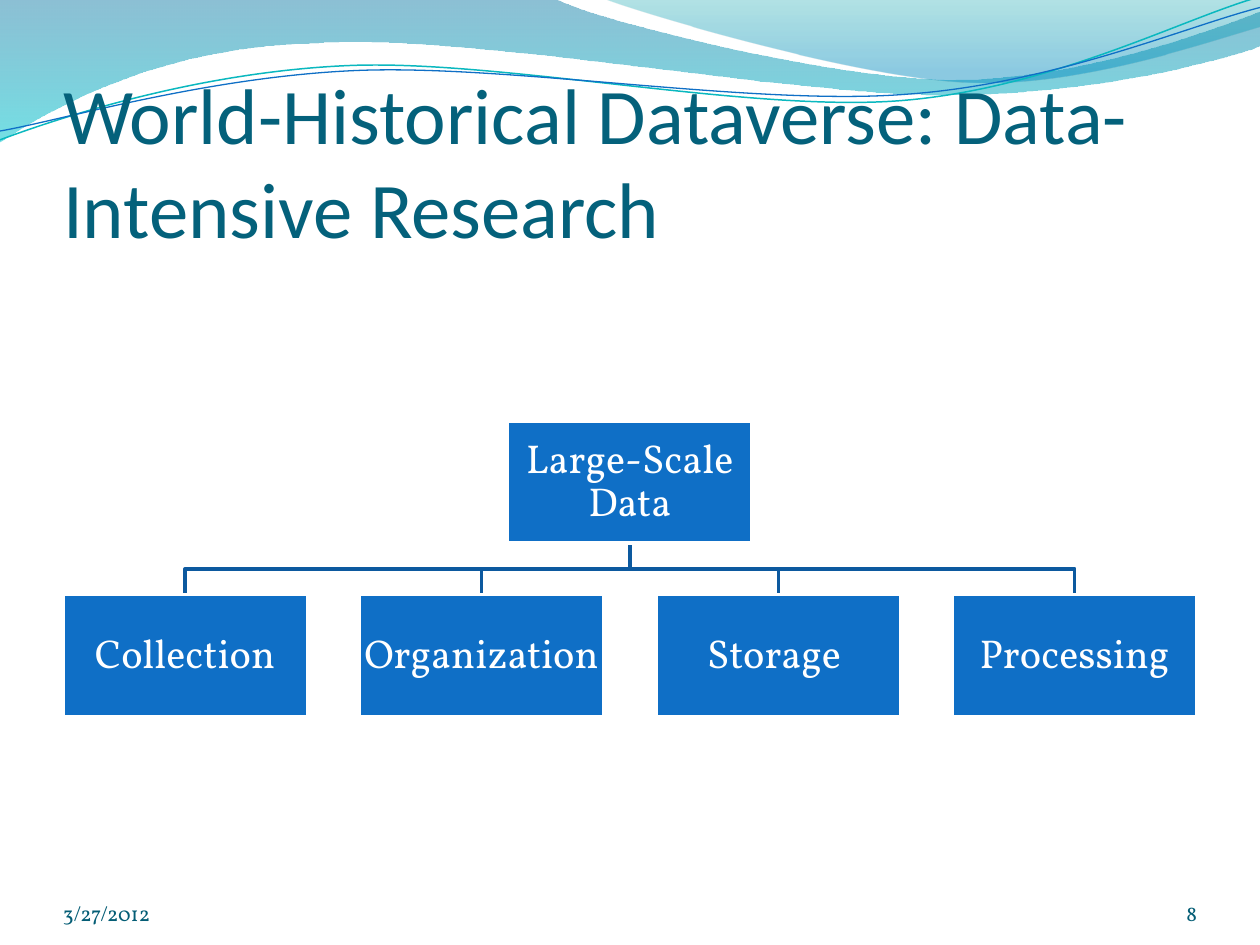
import math
from typing import NamedTuple, Optional

from lxml import etree
from pptx import Presentation
from pptx import util as u
from pptx.dml.color import RGBColor
from pptx.enum import shapes, text
from pptx.oxml.ns import qn

WHITE = RGBColor(0xFF, 0xFF, 0xFF)
BLUE = RGBColor(0x0F, 0x6F, 0xC6)
DARK_BLUE = RGBColor(0x0C, 0x59, 0x9F)
TEAL = RGBColor(0x0A, 0xB8, 0xBF)
TITLE_COLOR = RGBColor(0x04, 0x61, 0x7B)
FOOTER_COLOR = RGBColor(0x04, 0x5D, 0x75)
WAVE_BLUE = RGBColor(0x00, 0x74, 0xA1)
WAVE_CYAN = RGBColor(0x00, 0xC6, 0xCF)
WAVE_GREEN = RGBColor(0x00, 0xA1, 0xA9)
WAVE_SKY = RGBColor(0x00, 0x8B, 0xBF)

BODY_FONT = "Vollkorn"
LINE_TILT = -2.7
BOX_WIDTH, BOX_HEIGHT = 1.94, 0.97
ROOT_TOP, CHILD_TOP = 3.34, 4.72
MARGIN, CONTENT_WIDTH = 0.5, 9
CENTER = 5.0


class Stop(NamedTuple):
    position: float
    color: RGBColor
    opacity: int


class Wave(NamedTuple):
    """Each segment holds one point (a line) or three points (a Bezier curve)."""
    start: tuple
    segments: list
    stops: tuple = ()
    line_color: Optional[RGBColor] = None
    line_width: float = 0
    pivot: Optional[tuple] = None


WAVES = [
    Wave((0, 0), [
        [(4.4, -0.01)],
        [(4.76, 0.17), (6.64, 0.63), (7.58, 0.63)],
        [(8.53, 0.63), (9.58, 0.26), (10, 0.09)],
        [(10.01, 0.36)],
        [(9.83, 0.44), (8.7, 0.76), (7.46, 0.75)],
        [(6.22, 0.75), (3.82, 0.28), (2.57, 0.34)],
        [(1.29, 0.36), (0.46, 0.83), (-0.01, 1.13)],
        [(0, 0)],
    ], stops=(Stop(0, WAVE_BLUE, 45), Stop(1, WAVE_CYAN, 55))),
    Wave((4.79, -0.01), [
        [(5.09, 0.11), (6.82, 0.62), (7.69, 0.65)],
        [(8.56, 0.69), (9.61, 0.32), (10, 0.21)],
        [(10, 0)],
        [(4.79, -0.01)],
    ], stops=(Stop(0, WAVE_GREEN, 30), Stop(0.8, WAVE_SKY, 45))),
    Wave((0, 1.11), [
        [(0.48, 0.93), (1.58, 0.57), (2.77, 0.52)],
        [(3.95, 0.47), (5.93, 0.89), (7.13, 0.8)],
        [(8.33, 0.71), (9.38, 0.15), (9.98, -0.02)],
    ], line_color=TEAL, line_width=0.85, pivot=(4.99, 0.58)),
    Wave((0, 1.04), [
        [(0.47, 0.96), (1.64, 0.61), (2.83, 0.56)],
        [(4.03, 0.51), (5.97, 0.84), (7.17, 0.75)],
        [(8.36, 0.67), (9.41, 0.21), (10, 0.06)],
    ], line_color=BLUE, line_width=0.75, pivot=(5, 0.59)),
]
CHILDREN = ["Collection", "Organization", "Storage ", "Processing"]


def level(point: tuple, pivot: tuple) -> tuple:
    """Turn a point about the pivot so that the tilt of its line is undone."""
    angle = math.radians(-LINE_TILT)
    dx, dy = point[0] - pivot[0], point[1] - pivot[1]
    return (pivot[0] + dx * math.cos(angle) - dy * math.sin(angle),
            pivot[1] + dx * math.sin(angle) + dy * math.cos(angle))


def add_outline(page, points: list, close: bool = False):
    emu = [(u.Inches(x), u.Inches(y)) for x, y in points]
    builder = page.shapes.build_freeform(*emu[0])
    builder.add_line_segments(emu[1:], close=close)
    outline = builder.convert_to_shape()
    outline.shadow.inherit = False
    return outline


def bend(outline, segments: list) -> None:
    """Join the three line steps of each curved segment into one Bezier step."""
    steps = iter(list(outline._element.spPr.iter(qn("a:lnTo"))))
    for segment in segments:
        parts = [next(steps) for _ in segment]
        if len(parts) == 3:
            curve = etree.Element(qn("a:cubicBezTo"))
            parts[0].addprevious(curve)
            for part in parts:
                curve.append(part[0])
                part.getparent().remove(part)


def set_line(shape, color: RGBColor, width: float) -> None:
    shape.line.color.rgb = color
    shape.line.width = u.Pt(width)


def add_wave(page, wave: Wave) -> None:
    points = [wave.start] + [point for segment in wave.segments for point in segment]
    if wave.pivot:
        points = [level(point, wave.pivot) for point in points]
    outline = add_outline(page, points, close=bool(wave.stops))
    bend(outline, wave.segments)
    if wave.pivot:
        outline.rotation = LINE_TILT
        outline.fill.background()
        set_line(outline, wave.line_color, wave.line_width)
        return
    outline.line.fill.background()
    outline.fill.gradient()
    outline.fill.gradient_angle = 270
    for target, stop in zip(outline.fill.gradient_stops, wave.stops):
        target.position = stop.position
        target.color.rgb = stop.color
    colors = outline._element.spPr.iter(qn("a:srgbClr"))
    for color, stop in zip(list(colors), wave.stops):
        etree.SubElement(color, qn("a:alpha")).set("val", str(stop.opacity * 1000))


def write(shape, content: str, *, size: float, color: RGBColor, font: str = BODY_FONT,
          align=text.PP_ALIGN.LEFT, anchor=text.MSO_ANCHOR.BOTTOM,
          margins: tuple = (0, 0, 0, 0), spacing: float = 1.0) -> None:
    """Margins run left, top, right, bottom, in inches."""
    frame = shape.text_frame
    frame.word_wrap = True
    frame.auto_size = text.MSO_AUTO_SIZE.NONE
    frame.vertical_anchor = anchor
    (frame.margin_left, frame.margin_top,
     frame.margin_right, frame.margin_bottom) = map(u.Inches, margins)
    para = frame.paragraphs[0]
    para.alignment = align
    para.line_spacing = spacing
    span = para.add_run()
    span.text = content
    span.font.size = u.Pt(size)
    span.font.name = font
    span.font.color.rgb = color


def add_node(page, label: str, left: float, top: float) -> None:
    box = page.shapes.add_shape(shapes.MSO_SHAPE.RECTANGLE, *map(
        u.Inches, (left, top, BOX_WIDTH, BOX_HEIGHT)))
    box.shadow.inherit = False
    box.fill.solid()
    box.fill.fore_color.rgb = BLUE
    set_line(box, WHITE, 2)
    write(box, label, size=23, color=WHITE, align=text.PP_ALIGN.CENTER,
          anchor=text.MSO_ANCHOR.MIDDLE, margins=(0.02,) * 4, spacing=0.9)


def add_branch(page, child_center: float) -> None:
    root_bottom = ROOT_TOP + BOX_HEIGHT
    middle = (root_bottom + CHILD_TOP) / 2
    branch = add_outline(page, [(CENTER, root_bottom), (CENTER, middle),
                                (child_center, middle), (child_center, CHILD_TOP)])
    branch.fill.background()
    set_line(branch, DARK_BLUE, 2)


def add_footer(page, content: str, left: float, width: float, align) -> None:
    box = page.shapes.add_textbox(*map(u.Inches, (left, 6.95, width, 0.4)))
    write(box, content, size=12, color=FOOTER_COLOR, align=align)


def main() -> None:
    deck = Presentation()
    deck.slide_width, deck.slide_height = u.Inches(10), u.Inches(7.5)
    page = deck.slides.add_slide(deck.slide_layouts[5])

    for wave in WAVES:
        add_wave(page, wave)

    title = page.shapes.title
    page.shapes._spTree.append(title._element)  # in front of the waves
    title.left, title.top, title.width, title.height = map(
        u.Inches, (MARGIN, 0.77, CONTENT_WIDTH, 1.25))
    write(title, "World-Historical Dataverse: Data-Intensive Research", size=45,
          color=TITLE_COLOR, font="Calibri", margins=(0, 0.05, 0, 0))

    pitch = (CONTENT_WIDTH - BOX_WIDTH) / (len(CHILDREN) - 1)
    lefts = [MARGIN + pitch * index for index in range(len(CHILDREN))]
    for left in reversed(lefts):
        add_branch(page, left + BOX_WIDTH / 2)
    add_node(page, "Large-Scale Data", CENTER - BOX_WIDTH / 2, ROOT_TOP)
    for label, left in zip(CHILDREN, lefts):
        add_node(page, label, left, CHILD_TOP)

    add_footer(page, "3/27/2012", MARGIN, 2.33, text.PP_ALIGN.LEFT)
    add_footer(page, "8", 8.67, 0.83, text.PP_ALIGN.RIGHT)
    deck.save("out.pptx")


if __name__ == "__main__":
    main()
